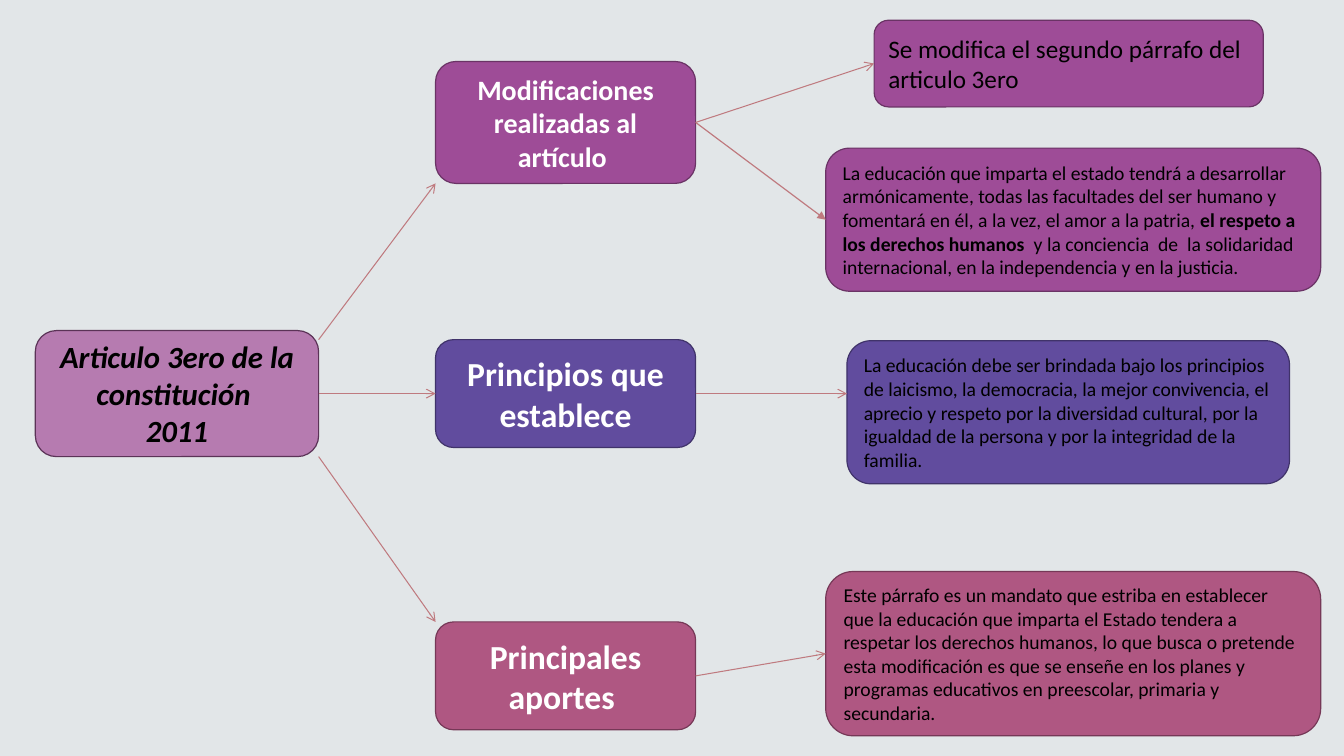
from lxml import etree
from pptx import Presentation
from pptx.dml.color import RGBColor
from pptx.enum.shapes import MSO_CONNECTOR, MSO_SHAPE
from pptx.enum.text import MSO_ANCHOR, PP_ALIGN
from pptx.oxml.ns import qn
from pptx.util import Inches, Pt

ROUNDED = MSO_SHAPE.ROUNDED_RECTANGLE
STRAIGHT = MSO_CONNECTOR.STRAIGHT
MIDDLE = MSO_ANCHOR.MIDDLE
LEFT, CENTER = PP_ALIGN.LEFT, PP_ALIGN.CENTER
LEFT_SIDE, RIGHT_SIDE = 1, 3

WIDTH, HEIGHT = Inches(13.33), Inches(7.5)
FONT = "Calibri"
COLORS = {
    "background": "E2E6E8",
    "arrow": "BF7A7F",
    "black": "000000",
    "white": "FFFFFF",
    "lilac": "B67BB0", "lilac edge": "5B3357",
    "purple": "9E4C97", "purple edge": "6A3365",
    "violet": "614C9E", "violet edge": "40336A",
    "rose": "AF5782", "rose edge": "763857",
}

# Places are left, top, width, height in percent of the slide.
ROOT_PLACE = (2.63, 43.73, 21.08, 16.67)
TOPIC_LEFT, TOPIC_WIDTH = 32.41, 19.35
WIDE_LEFT, WIDE_WIDTH = 61.44, 36.83


def color(name):
    return RGBColor.from_string(COLORS[name])


def across(share):
    return round(WIDTH * share / 100)


def down(share):
    return round(HEIGHT * share / 100)


def add_box(page, place, tone, paragraphs, size, ink="black", align=LEFT, italic=False):
    """Add a rounded box; each paragraph is a list of (text, bold) runs."""
    left, top, width, height = place
    box = page.shapes.add_shape(ROUNDED, across(left), down(top), across(width), down(height))
    box.shadow.inherit = False
    box.fill.solid()
    box.fill.fore_color.rgb = color(tone)
    box.line.color.rgb = color(f"{tone} edge")
    box.line.width = Pt(0.85)
    frame = box.text_frame
    frame.word_wrap = True
    frame.vertical_anchor = MIDDLE
    for index, runs in enumerate(paragraphs):
        para = frame.add_paragraph() if index else frame.paragraphs[0]
        para.alignment = align
        for text, bold in runs:
            span = para.add_run()
            span.text = text
            span.font.name = FONT
            span.font.size = Pt(size)
            span.font.bold = bold
            span.font.italic = italic
            span.font.color.rgb = color(ink)
    return box


def add_topic(page, top, height, tone, text, size):
    place = (TOPIC_LEFT, top, TOPIC_WIDTH, height)
    return add_box(page, place, tone, [[(text, True)]], size, "white", CENTER)


def add_arrow(page, start, end, head="arrow", weight=0.75):
    arrow = page.shapes.add_connector(STRAIGHT, *start, *end)
    arrow.line.width = Pt(weight)
    arrow.line.color.rgb = color("arrow")
    properties = arrow._element.spPr
    etree.SubElement(properties.find(qn("a:ln")), qn("a:tailEnd"), type=head)
    etree.SubElement(properties, qn("a:effectLst"))
    return arrow


def left_middle(box):
    return box.left, box.top + box.height // 2


def right_middle(box):
    return box.left + box.width, box.top + box.height // 2


def join(page, source, target, head="arrow", weight=0.75):
    """Join the right side of one box to the left side of another."""
    arrow = add_arrow(page, right_middle(source), left_middle(target), head, weight)
    arrow.begin_connect(source, RIGHT_SIDE)
    arrow.end_connect(target, LEFT_SIDE)


def main():
    deck = Presentation()
    deck.slide_width, deck.slide_height = WIDTH, HEIGHT
    page = deck.slides.add_slide(deck.slide_layouts[6])
    page.background.fill.solid()
    page.background.fill.fore_color.rgb = color("background")

    root = add_box(
        page, ROOT_PLACE, "lilac",
        [[("Articulo 3ero de la constitución ", True)], [("2011", True)]],
        22, align=CENTER, italic=True)

    changes = add_topic(page, 8.13, 16.13, "purple", "Modificaciones realizadas al artículo ", 20)
    principles = add_topic(page, 44.93, 14.27, "violet", "Principios que establece", 24)
    contributions = add_topic(page, 82.27, 14.27, "rose", "Principales aportes ", 24)

    changed_part = add_box(
        page, (65.04, 2.67, 28.96, 11.47), "purple",
        [[("Se modifica el segundo párrafo del articulo 3ero", False)]], 18)
    new_wording = add_box(
        page, (WIDE_LEFT, 19.6, WIDE_WIDTH, 18.93), "purple",
        [[("La educación que imparta el estado tendrá a desarrollar armónicamente, "
           "todas las facultades del ser humano y fomentará en él, a la vez, "
           "el amor a la patria, ", False),
          ("el respeto a los derechos humanos ", True),
          (" y la conciencia  de  la solidaridad internacional, "
           "en la independencia y en la justicia.", False)]], 14)
    principle_list = add_box(
        page, (63.02, 45.07, 32.93, 18.93), "violet",
        [[("La educación debe ser brindada bajo los principios de laicismo, "
           "la democracia, la mejor convivencia, el aprecio y respeto por la "
           "diversidad cultural, por la igualdad de la persona y por la "
           "integridad de la familia.", False)]], 14)
    mandate = add_box(
        page, (WIDE_LEFT, 75.6, WIDE_WIDTH, 21.73), "rose",
        [[("Este párrafo es un mandato que estriba en establecer que la educación "
           "que imparta el Estado tendera a respetar los derechos humanos, lo que "
           "busca o pretende esta modificación es que se enseñe en los planes y "
           "programas educativos en preescolar, primaria y secundaria.", False)]], 14)

    root_right = root.left + root.width
    add_arrow(page, (root_right, principles.top), (changes.left, changes.top + changes.height))
    join(page, root, principles)
    add_arrow(page, (root_right, root.top + root.height), (contributions.left, contributions.top))
    join(page, changes, changed_part)
    join(page, changes, new_wording, "triangle", 0.85)
    level = right_middle(principles)
    level_arrow = add_arrow(page, level, (principle_list.left, level[1]))
    level_arrow.begin_connect(principles, RIGHT_SIDE)
    join(page, contributions, mandate)

    deck.save("out.pptx")


if __name__ == "__main__":
    main()
